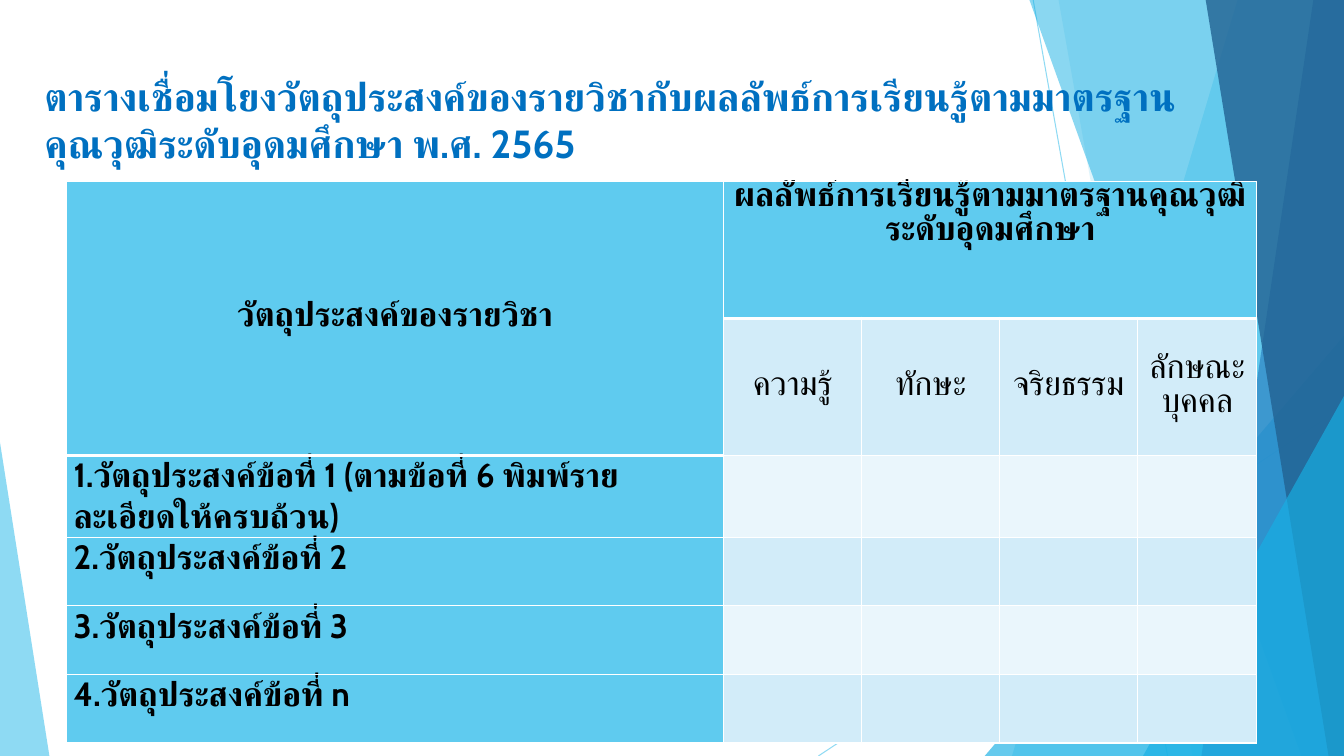
from lxml.etree import SubElement as Sub
from pptx import Presentation
from pptx.dml.color import RGBColor as Rgb
from pptx.enum.shapes import MSO_CONNECTOR as Link, MSO_SHAPE as Kind
from pptx.enum.text import MSO_ANCHOR as Anchor, MSO_AUTO_SIZE as Fit, PP_ALIGN as Align
from pptx.oxml.ns import qn
from pptx.util import Pt

HUES = {"sky": "5FCBEF", "cyan": "17B0E4", "blue": "2E83C3", "navy": "226292",
        "title": "0070C0", "ink": "000000", "white": "FFFFFF",
        "pale": "EAF6FC", "tint": "D2ECF9"}
FONT = "Cabin"
HEAD = "ตารางเชื่อมโยงวัตถุประสงค์ของรายวิชากับผลลัพธ์การเรียนรู้ตามมาตรฐานคุณวุฒิระดับอุดมศึกษา พ.ศ. 2565"
GOAL = "วัตถุประสงค์ของรายวิชา"
SCOPE = "ผลลัพธ์การเรียนรู้ตามมาตรฐานคุณวุฒิระดับอุดมศึกษา"
SKILLS = ["ความรู้", "ทักษะ", "จริยธรรม", "ลักษณะบุคคล"]
ITEMS = ["1.วัตถุประสงค์ข้อที่ 1 (ตามข้อที่ 6 พิมพ์รายละเอียดให้ครบถ้วน)",
         "2.วัตถุประสงค์ข้อที่ 2", "3.วัตถุประสงค์ข้อที่ 3", "4.วัตถุประสงค์ข้อที่ n"]
COLS = [469.4, 98.6, 98.6, 98.6, 85]
ROWS = [97.9] * 2 + [49] * 4
RAYS = [(738, 0, 834, 540), (960, 290.2, 584.6, 540)]
PANES = [("slab", (884.2, 722.9), "sky", 36), ("slab", (756, 851.8), "sky", 20),
         ("wedge", (703.4, 239.8, 256.6, 300.2, 1), "cyan", 66),
         ("slab", (735.1, 929.5), "cyan", 50), ("slab", (938.2, 858.2), "blue", 70),
         ("slab", (861.1, 949), "navy", 80),
         ("wedge", (816.5, 283, 143.5, 257, 1), "cyan", 66),
         ("wedge", (0, 316.1, 35.3, 223.9, 0), "sky", 70)]


def put(obj, **vals):
    """Set each given value on an object."""
    for name, val in vals.items():
        setattr(obj, name, val)


def hue(name):
    """Return a named colour."""
    return Rgb.from_string(HUES[name])


def fade(node, pct):
    """Give the colour inside a node its opacity."""
    tone = next(node.iter(qn("a:srgbClr")))
    Sub(tone, qn("a:alpha"), val=str(pct * 1000))


def write(frame, text, size, tone, bold, align=Align.LEFT, gap=None):
    """Write one styled paragraph into a text frame."""
    para = frame.paragraphs[0]
    put(para, alignment=align, line_spacing=gap)
    run = para.add_run()
    run.text = text
    put(run.font, size=Pt(size), bold=bold, name=FONT)
    run.font.color.rgb = hue(tone)
    Sub(run.font._element, qn("a:cs"), typeface=FONT)


def slab(shapes, box, top, base):
    """Draw a slanted pane that reaches the right edge of the box."""
    x, y, w, h = box
    pen = shapes.build_freeform(Pt(x + top), Pt(y - 0.72))
    pen.add_line_segments([(Pt(x + w), Pt(y - 0.72)), (Pt(x + w), Pt(y + h)),
                           (Pt(x + base), Pt(y + h))])
    return pen.convert_to_shape()


def wedge(shapes, box, left, top, wide, high, tip):
    """Draw a right triangle at a place in the box."""
    x, y = box[:2]
    part = shapes.add_shape(Kind.ISOSCELES_TRIANGLE, Pt(x + left), Pt(y + top),
                            Pt(wide), Pt(high))
    part.adjustments[0] = tip
    return part


def backdrop(shapes, box):
    """Draw the rays and clear panes behind the content."""
    x, y = box[:2]
    for x1, y1, x2, y2 in RAYS:
        ray = shapes.add_connector(Link.STRAIGHT, Pt(x + x1), Pt(y + y1),
                                   Pt(x + x2), Pt(y + y2))
        ray.line.width = Pt(0.75)
        ray.line.color.rgb = hue("sky")
        props = ray._element.spPr
        fade(props, 70)
        Sub(props, qn("a:effectLst"))
    draw = {"slab": slab, "wedge": wedge}
    for kind, dims, tone, pct in PANES:
        part = draw[kind](shapes, box, *dims)
        part.shadow.inherit = False
        part.fill.solid()
        part.fill.fore_color.rgb = hue(tone)
        part.line.fill.background()
        fade(part._element.spPr, pct)


def heading(shapes, box):
    """Place the title above the backdrop."""
    title = shapes.title
    put(title, **dict(zip(("left", "top", "width", "height"), map(Pt, box))))
    put(title.text_frame, word_wrap=True, auto_size=Fit.NONE,
        vertical_anchor=Anchor.TOP)
    write(title.text_frame, HEAD, 28, "title", True)
    shapes._spTree.append(title._element)


def edge(cell, row, col):
    """Draw white cell borders, thick below the heads."""
    above = (row == 1 and col > 0) or (row == 2 and col == 0)
    below = row == 0 or (row == 1 and col == 0)
    props = cell._tc.get_or_add_tcPr()
    for side, wide in zip("LRTB", (1, 1, 3 if above else 1, 3 if below else 1)):
        line = Sub(props, qn("a:ln" + side), w=str(Pt(wide)))
        Sub(Sub(line, qn("a:solidFill")), qn("a:srgbClr"), val=HUES["white"])


def matrix(shapes, box):
    """Build the table of aims against outcomes."""
    grid = shapes.add_table(len(ROWS), len(COLS), *map(Pt, box)).table
    for col, wide in zip(grid.columns, COLS):
        col.width = Pt(wide)
    for row, high in zip(grid.rows, ROWS):
        row.height = Pt(high)
    texts = [[GOAL, SCOPE], ["", *SKILLS]] + [[item] for item in ITEMS]
    for r, line in enumerate(texts):
        for c in range(len(COLS)):
            cell = grid.cell(r, c)
            head = r == 0 or c == 0
            edge(cell, r, c)
            cell.fill.solid()
            cell.fill.fore_color.rgb = hue("sky" if head else "tint" if r % 2 else "pale")
            mid = r == 1 or (r == 0 and c == 0)
            put(cell, margin_left=Pt(5.04), margin_right=Pt(5.04), margin_top=0,
                margin_bottom=0, vertical_anchor=Anchor.MIDDLE if mid else Anchor.TOP)
            if c < len(line) and line[c]:
                style = (Align.CENTER, Pt(24)) if r < 2 else ()
                write(cell.text_frame, line[c], 24, "ink", head, *style)
    grid.cell(0, 0).merge(grid.cell(1, 0))
    grid.cell(0, 1).merge(grid.cell(0, 4))


def main():
    """Build and save the slide."""
    deck = Presentation()
    put(deck, slide_width=Pt(960), slide_height=Pt(540))
    shapes = deck.slides.add_slide(deck.slide_layouts[5]).shapes
    backdrop(shapes, (0, 0, 960, 540))
    heading(shapes, (24.5, 48.2, 864.7, 103.7))
    matrix(shapes, (47.5, 129.6, sum(COLS), sum(ROWS)))
    deck.save("out.pptx")


if __name__ == "__main__":
    main()
